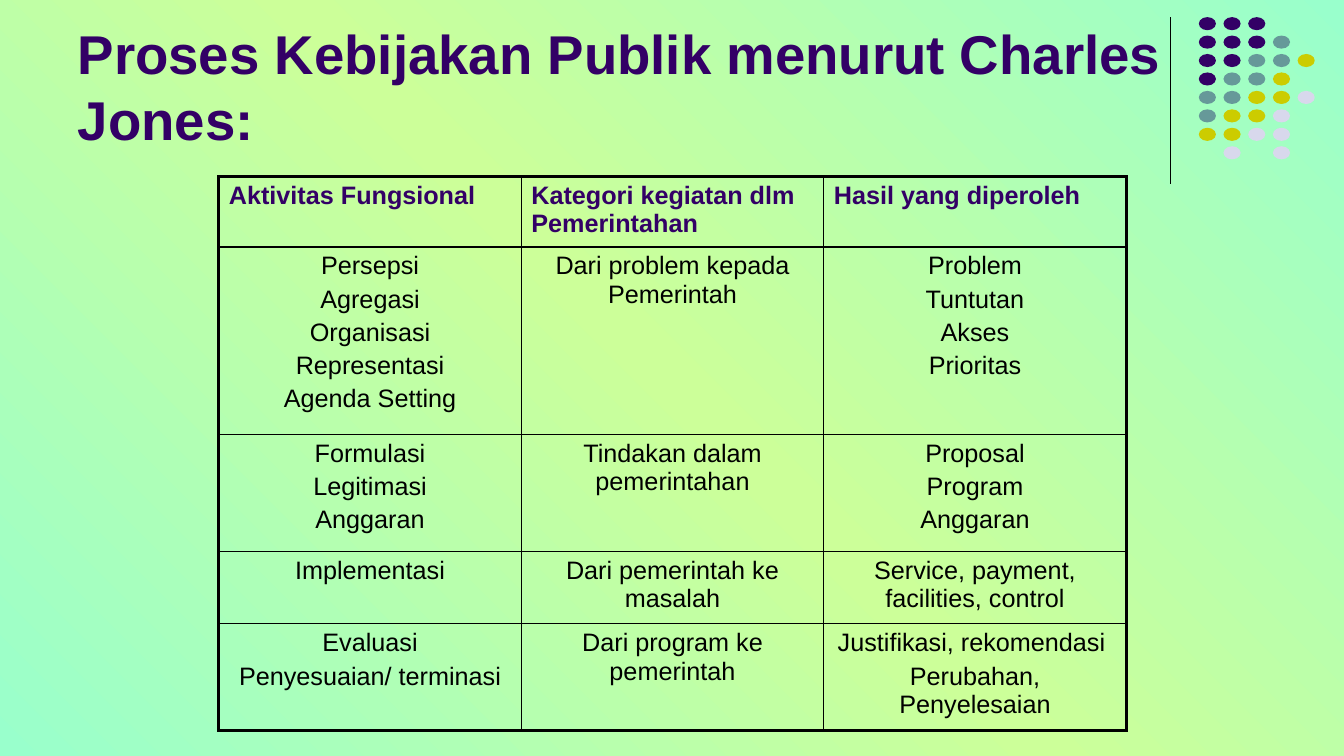
from copy import deepcopy

from lxml.etree import SubElement
from pptx import Presentation
from pptx.dml.color import RGBColor
from pptx.enum.shapes import MSO_CONNECTOR, MSO_SHAPE
from pptx.enum.text import MSO_ANCHOR, MSO_AUTO_SIZE, PP_ALIGN
from pptx.oxml.ns import qn
from pptx.util import Inches, Pt

TITLE = "Proses Kebijakan Publik menurut Charles Jones:"
HEADINGS = ["Aktivitas Fungsional", "Kategori kegiatan dlm Pemerintahan", "Hasil yang diperoleh"]
STAGES = [
    (["Persepsi", "Agregasi", "Organisasi", "Representasi", "Agenda Setting"],
     ["Dari problem kepada Pemerintah"],
     ["Problem", "Tuntutan", "Akses", "Prioritas"]),
    (["Formulasi", "Legitimasi", "Anggaran"],
     ["Tindakan dalam pemerintahan"],
     ["Proposal", "Program", "Anggaran"]),
    (["Implementasi"],
     ["Dari pemerintah ke masalah"],
     ["Service, payment, facilities, control"]),
    (["Evaluasi", "Penyesuaian/ terminasi"],
     ["Dari program ke pemerintah"],
     ["Justifikasi, rekomendasi ", "Perubahan, Penyelesaian"]),
]
ROW_HEIGHTS = [0.7, 1.86, 1.16, 0.72, 1.06]
COLUMN_WIDTH = 3

PURPLE, BLACK = "330066", "000000"
BACKGROUND = ["99FFCC", "CCFF99", "99FFCC"]
DOT_COLORS = {"P": PURPLE, "T": "669999", "Y": "CCCC00", "L": "D8D8EC"}
DOT_ROWS = ["PPP", "PPPT", "PPTTY", "PTTY", "TTYYL", "TYYL", "YYLL", " L L"]


def rgb(color):
    return RGBColor.from_string(color)


def format_text(paragraph, size, color, bold):
    values = {"name": "Arial", "size": Pt(size), "bold": bold}
    for key, value in values.items():
        setattr(paragraph.font, key, value)
    paragraph.font.color.rgb = rgb(color)


def paint_background(slide):
    fill = slide.background.fill
    fill.gradient()
    fill.gradient_angle = 45
    stop_list = slide.element.xpath(".//a:gsLst")[0]
    stop_list.insert(1, deepcopy(stop_list[0]))
    for index, (stop, color) in enumerate(zip(fill.gradient_stops, BACKGROUND)):
        stop.position = index / (len(BACKGROUND) - 1)
        stop.color.rgb = rgb(color)


def add_dots(slide):
    for row, pattern in enumerate(DOT_ROWS):
        for column, key in enumerate(pattern):
            if key == " ":
                continue
            dot = slide.shapes.add_shape(
                MSO_SHAPE.OVAL, Inches(11.89 + 0.245 * column),
                Inches(0.17 + 0.183 * row), Inches(0.17), Inches(0.13))
            dot.shadow.inherit = False
            dot.fill.solid()
            dot.fill.fore_color.rgb = rgb(DOT_COLORS[key])
            dot.line.fill.background()


def add_divider(slide):
    divider = slide.shapes.add_connector(
        MSO_CONNECTOR.STRAIGHT, Inches(11.61), Inches(0.17), Inches(11.61), Inches(1.83))
    divider.line.color.rgb = rgb(BLACK)
    divider.line.width = Pt(0.75)
    SubElement(divider.element.spPr, qn("a:effectLst"))


def fill_title(slide):
    title = slide.shapes.title
    box = {"left": 0.67, "top": 0.13, "width": 11, "height": 1.42}
    for key, value in box.items():
        setattr(title, key, Inches(value))
    frame = title.text_frame
    frame.text = TITLE
    frame.auto_size = MSO_AUTO_SIZE.NONE
    frame.vertical_anchor = MSO_ANCHOR.BOTTOM
    heading = frame.paragraphs[0]
    heading.alignment = PP_ALIGN.LEFT
    heading.line_spacing = 1.0
    format_text(heading, 39, PURPLE, True)


def add_borders(cell, outer_sides):
    """Draw all four sides, thicker on the table's outer edge."""
    properties = cell._tc.get_or_add_tcPr()
    for side, is_outer in outer_sides.items():
        width = Pt(2.25 if is_outer else 1)
        line = SubElement(properties, qn(f"a:ln{side}"), w=str(width))
        solid = SubElement(line, qn("a:solidFill"))
        SubElement(solid, qn("a:srgbClr"), val=BLACK)


def add_process_table(slide):
    rows = [[[heading] for heading in HEADINGS], *STAGES]
    last_row, last_column = len(rows) - 1, len(HEADINGS) - 1
    table = slide.shapes.add_table(
        len(rows), len(HEADINGS), Inches(2.17), Inches(1.75),
        Inches(COLUMN_WIDTH * len(HEADINGS)), Inches(sum(ROW_HEIGHTS))).table
    table.first_row = table.horz_banding = False
    for column in table.columns:
        column.width = Inches(COLUMN_WIDTH)
    for r, (row, height) in enumerate(zip(rows, ROW_HEIGHTS)):
        table.rows[r].height = Inches(height)
        is_heading = r == 0
        for c, entries in enumerate(row):
            cell = table.cell(r, c)
            add_borders(cell, {"L": c == 0, "R": c == last_column,
                               "T": is_heading, "B": r == last_row})
            cell.fill.background()
            cell.text = "\n".join(entries)
            for paragraph in cell.text_frame.paragraphs:
                paragraph.alignment = PP_ALIGN.LEFT if is_heading else PP_ALIGN.CENTER
                paragraph.space_before = Pt(3.6)
                format_text(paragraph, 18, PURPLE if is_heading else BLACK, is_heading)


def main():
    deck = Presentation()
    deck.slide_width, deck.slide_height = Inches(13.33), Inches(7.5)
    slide = deck.slides.add_slide(deck.slide_layouts.get_by_name("Title Only"))
    paint_background(slide)
    add_divider(slide)
    add_dots(slide)
    fill_title(slide)
    add_process_table(slide)
    deck.save("out.pptx")


if __name__ == "__main__":
    main()
